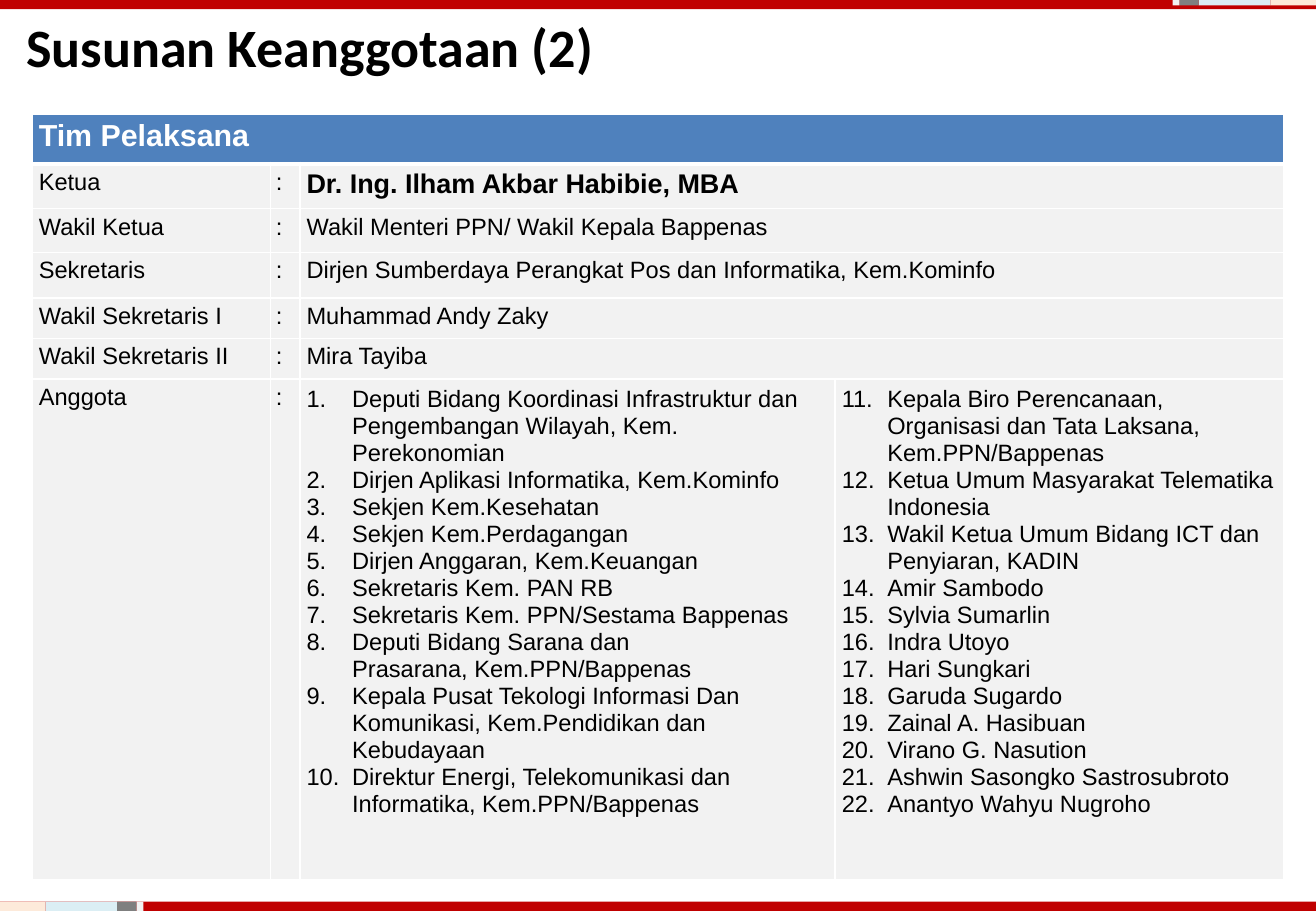
from dataclasses import dataclass

from lxml.etree import SubElement
from pptx import Presentation
from pptx.dml.color import RGBColor
from pptx.enum.shapes import MSO_SHAPE as Preset
from pptx.oxml import parse_xml
from pptx.oxml.ns import nsdecls, qn
from pptx.util import Pt


@dataclass(frozen=True)
class Theme:
    red: str = "C00000"
    peach: str = "FDEADA"
    sky: str = "DBEEF4"
    gray: str = "7F7F7F"
    pale: str = "F2F2F2"
    header: str = "4F81BD"
    white: str = "FFFFFF"
    black: str = "000000"
    title_font: str = "Calibri"
    body_font: str = "Arial"
    title_size: float = 32
    header_size: float = 18
    chair_size: float = 16
    body_size: float = 14


THEME = Theme()
WIDTH, HEIGHT = 780, 540
BAR_HEIGHT = 5.5
STRIPES = [(27, THEME.peach), (42.5, THEME.sky), (11.5, THEME.gray), (4, THEME.pale)]
COLUMN_WIDTHS = [141.5, 17.25, 317.25, 266.25]
ROW_HEIGHTS = [29.5, 26.5, 26, 27, 24, 24, 297]
OFFICERS = [
    ("Ketua", "Dr. Ing. Ilham Akbar Habibie, MBA"),
    ("Wakil Ketua", "Wakil Menteri PPN/ Wakil Kepala Bappenas"),
    ("Sekretaris", "Dirjen Sumberdaya Perangkat Pos dan Informatika, Kem.Kominfo"),
    ("Wakil Sekretaris I", "Muhammad Andy Zaky"),
    ("Wakil Sekretaris II", "Mira Tayiba"),
]
MEMBERS = [
    "Deputi Bidang Koordinasi Infrastruktur dan Pengembangan Wilayah, Kem.\vPerekonomian",
    "Dirjen Aplikasi Informatika, Kem.Kominfo",
    "Sekjen Kem.Kesehatan",
    "Sekjen Kem.Perdagangan",
    "Dirjen Anggaran, Kem.Keuangan",
    "Sekretaris Kem. PAN RB",
    "Sekretaris Kem. PPN/Sestama Bappenas",
    "Deputi Bidang Sarana dan\vPrasarana, Kem.PPN/Bappenas",
    "Kepala Pusat Tekologi Informasi Dan Komunikasi, Kem.Pendidikan dan Kebudayaan",
    "Direktur Energi, Telekomunikasi dan Informatika, Kem.PPN/Bappenas",
    "Kepala Biro Perencanaan,\vOrganisasi dan Tata Laksana, Kem.PPN/Bappenas",
    "Ketua Umum Masyarakat Telematika Indonesia",
    "Wakil Ketua Umum Bidang ICT dan Penyiaran, KADIN",
    "Amir Sambodo",
    "Sylvia Sumarlin",
    "Indra Utoyo",
    "Hari Sungkari",
    "Garuda Sugardo",
    "Zainal A. Hasibuan",
    "Virano G. Nasution",
    "Ashwin Sasongko Sastrosubroto",
    "Anantyo Wahyu Nugroho",
]
FIRST_COLUMN_MEMBERS = 10


def write_text(paragraph, text, size=THEME.body_size, font=THEME.body_font,
               color=THEME.black, bold=False):
    paragraph.text = text
    for run in paragraph.runs:
        run.font.name = font
        run.font.size = Pt(size)
        run.font.bold = bold
        run.font.color.rgb = RGBColor.from_string(color)


def add_bar(slide, left, top, width, height, color):
    shape = slide.shapes.add_shape(Preset.RECTANGLE, Pt(left), Pt(top), Pt(width), Pt(height))
    shape.shadow.inherit = False
    shape.fill.solid()
    shape.fill.fore_color.rgb = RGBColor.from_string(color)
    shape.line.fill.background()


def add_edge_bars(slide):
    bottom = HEIGHT - BAR_HEIGHT
    add_bar(slide, 0, 0, WIDTH, BAR_HEIGHT, THEME.red)
    add_bar(slide, 0, bottom, WIDTH, BAR_HEIGHT, THEME.red)
    left = 0
    for width, color in STRIPES:
        add_bar(slide, left, bottom, width, BAR_HEIGHT, color)
        add_bar(slide, WIDTH - left - width, 0, width, 3.25, color)
        left += width


def add_title(slide, text):
    box = slide.shapes.add_textbox(Pt(15.5), Pt(6), Pt(390), Pt(40))
    frame = box.text_frame
    frame.word_wrap = True
    frame.margin_left = frame.margin_right = frame.margin_bottom = 0
    frame.margin_top = Pt(2)
    write_text(frame.paragraphs[0], text, size=THEME.title_size, font=THEME.title_font, bold=True)


def style_cell(cell, color, inset_left=4, top_line=1, bottom_line=1):
    cell.margin_left, cell.margin_top = Pt(inset_left), Pt(3)
    cell.margin_right = cell.margin_bottom = 0
    cell.fill.solid()
    cell.fill.fore_color.rgb = RGBColor.from_string(color)
    properties = cell._tc.get_or_add_tcPr()
    borders = [("L", 1), ("R", 1), ("T", top_line), ("B", bottom_line)]
    for index, (side, weight) in enumerate(borders):
        properties.insert(index, parse_xml(
            f'<a:ln{side} {nsdecls("a")} w="{Pt(weight)}"><a:solidFill>'
            f'<a:srgbClr val="{THEME.white}"/></a:solidFill></a:ln{side}>'))


def number_paragraph(paragraph, start):
    properties = paragraph._p.get_or_add_pPr()
    properties.set("marL", str(Pt(27)))
    properties.set("indent", str(Pt(-27)))
    numbering = SubElement(properties, qn("a:buAutoNum"), type="arabicPeriod")
    if start > 1:
        numbering.set("startAt", str(start))
    paragraph.line_spacing = Pt(16)


def write_members(cell, members, start):
    cell.margin_top = Pt(4)
    frame = cell.text_frame
    for index, member in enumerate(members):
        paragraph = frame.add_paragraph() if index else frame.paragraphs[0]
        number_paragraph(paragraph, start)
        write_text(paragraph, member)


def add_team_table(slide):
    table = slide.shapes.add_table(
        len(ROW_HEIGHTS), len(COLUMN_WIDTHS), Pt(19), Pt(67.7),
        Pt(sum(COLUMN_WIDTHS)), Pt(sum(ROW_HEIGHTS))).table
    table.first_row = table.horz_banding = False
    for column, width in zip(table.columns, COLUMN_WIDTHS):
        column.width = Pt(width)
    for row_index, (row, height) in enumerate(zip(table.rows, ROW_HEIGHTS)):
        row.height = Pt(height)
        for column_index, cell in enumerate(row.cells):
            style_cell(cell, THEME.pale if row_index else THEME.header,
                       inset_left=3 if column_index == 1 else 4,
                       top_line=3 if row_index == 1 else 1,
                       bottom_line=1 if row_index else 3)

    def write_cell(row, column, text, **style):
        write_text(table.cell(row, column).text_frame.paragraphs[0], text, **style)

    table.cell(0, 0).merge(table.cell(0, 3))
    write_cell(0, 0, "Tim Pelaksana", size=THEME.header_size, color=THEME.white, bold=True)
    for row, (role, name) in enumerate(OFFICERS, start=1):
        table.cell(row, 2).merge(table.cell(row, 3))
        write_cell(row, 0, role)
        write_cell(row, 1, ":")
        chair = row == 1
        write_cell(row, 2, name, bold=chair, size=THEME.chair_size if chair else THEME.body_size)

    members_row = len(OFFICERS) + 1
    write_cell(members_row, 0, "Anggota")
    write_cell(members_row, 1, ":")
    write_members(table.cell(members_row, 2), MEMBERS[:FIRST_COLUMN_MEMBERS], 1)
    write_members(table.cell(members_row, 3), MEMBERS[FIRST_COLUMN_MEMBERS:],
                  FIRST_COLUMN_MEMBERS + 1)


def main():
    presentation = Presentation()
    presentation.slide_width, presentation.slide_height = Pt(WIDTH), Pt(HEIGHT)
    slide = presentation.slides.add_slide(presentation.slide_layouts[6])
    add_edge_bars(slide)
    add_title(slide, "Susunan Keanggotaan (2)")
    add_team_table(slide)
    presentation.save("out.pptx")


if __name__ == "__main__":
    main()
